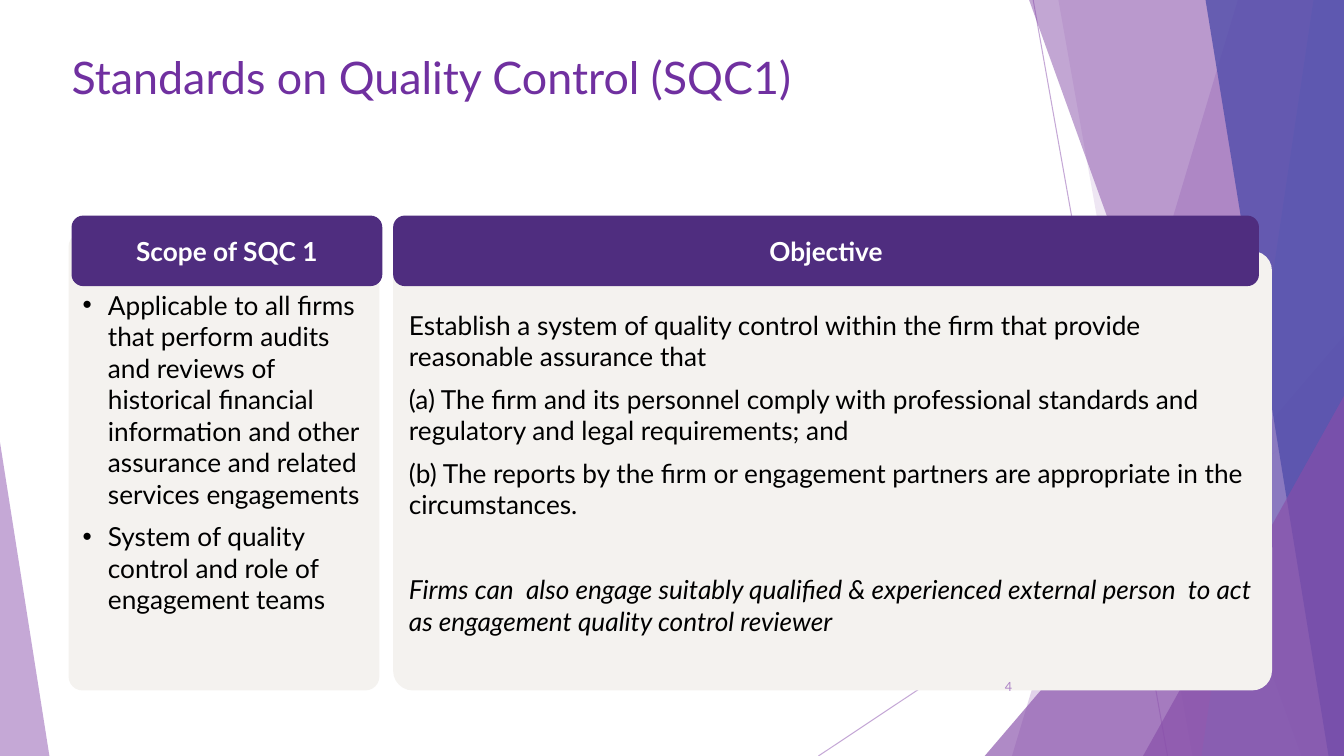
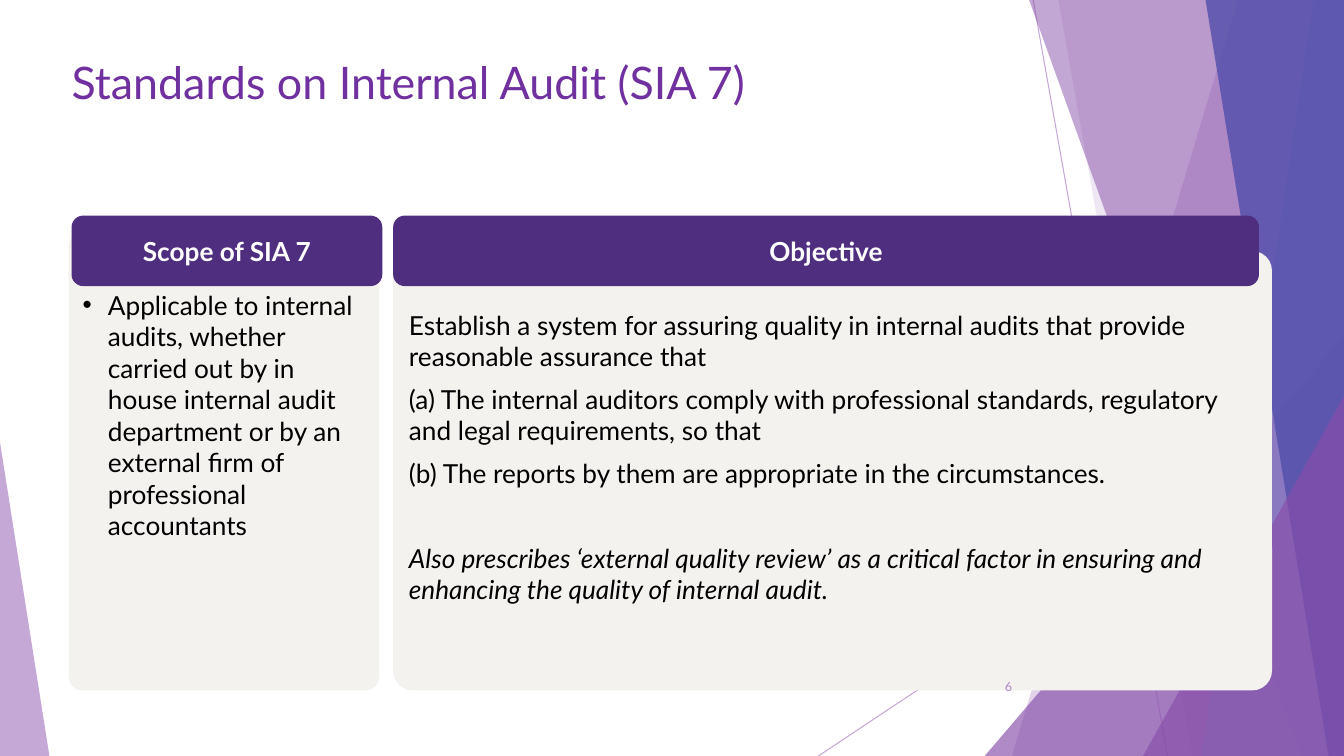
import pptx
import pptx.dml.color
import pptx.enum.shapes
import pptx.enum.text
import pptx.oxml.ns
import pptx.util
from lxml import etree

Pt = pptx.util.Pt
qn = pptx.oxml.ns.qn
SHAPE = pptx.enum.shapes.MSO_SHAPE
ALIGN = pptx.enum.text.PP_ALIGN
ANCHOR = pptx.enum.text.MSO_ANCHOR

WIDTH, HEIGHT = 960, 540
FONT = "Lato"
TITLE, HEADER, CARD = "7030A0", "4F2D7F", "F4F2EF"
LILAC, PURPLE, PERIWINKLE, INDIGO = "AD84C6", "874EA9", "8784C7", "524EAB"
BODY_SIZE = 18.7
CARD_BOTTOM, CARD_ROUNDING = 493.2, 0.045
HEADER_TOP, HEADER_HEIGHT = 154, 50.4

# Background lines: start x, start y, end x, end y
RAYS = [(738, 0, 834, HEIGHT), (WIDTH, 290.2, 584.6, HEIGHT)]
# Wedges: x at the top, x at the bottom. Triangles: left, top, width, apex.
FACETS = [
    ((884.2, 722.9), LILAC, 36),
    ((756, 851.8), LILAC, 20),
    ((703.4, 239.8, 256.6, 1), PURPLE, 66),
    ((735.1, 929.5), PURPLE, 50),
    ((938.2, 858.2), PERIWINKLE, 70),
    ((861.1, 949), INDIGO, 80),
    ((816.5, 283, 143.5, 1), PURPLE, 66),
    ((0, 316, 35.3, 0), LILAC, 70),
]
# Card left, top and width, then header left and width
COLUMNS = [(49, 166.3, 222, 51.1, 222), (280.8, 179.3, 627.8, 280.8, 618.5)]

STANDARDS = [
    {
        "title": "Standards on Quality Control (SQC1)",
        "title_top": 35.3,
        "number": "4",
        "headers": ["Scope of SQC 1", "Objective"],
        "scope": [
            "Applicable to all firms that perform audits and reviews of historical "
            "financial information and other assurance and related services engagements",
            "System of quality control and role of engagement teams",
        ],
        "objective": [
            "Establish a system of quality control within the firm that provide "
            "reasonable assurance that",
            "(a) The firm and its personnel comply with professional standards and "
            "regulatory and legal requirements; and",
            "(b) The reports by the firm or engagement partners are appropriate in "
            "the circumstances.",
        ],
        "remark": "Firms can  also engage suitably qualified & experienced external "
                  "person  to act as engagement quality control reviewer",
    },
    {
        "title": "Standards on Internal Audit (SIA 7)",
        "title_top": 38.9,
        "number": "6",
        "headers": ["Scope of SIA 7", "Objective"],
        "scope": [
            "Applicable to internal audits, whether carried out by in house internal "
            "audit department or by an external firm of professional accountants",
        ],
        "objective": [
            "Establish a system for assuring quality in internal audits that provide "
            "reasonable assurance that",
            "(a) The internal auditors comply with professional standards, regulatory "
            "and legal requirements, so that",
            "(b) The reports by them are appropriate in the circumstances.",
        ],
        "remark": "Also prescribes ‘external quality review’ as a critical factor in "
                  "ensuring and enhancing the quality of internal audit.",
    },
]


def paint(fill, colour):
    fill.solid()
    fill.fore_color.rgb = pptx.dml.color.RGBColor.from_string(colour)


def write(paragraph, text, size, colour, align=ALIGN.LEFT, bold=False, italic=False):
    paragraph.alignment = align
    run = paragraph.add_run()
    run.text = text
    run.font.name, run.font.size = FONT, Pt(size)
    run.font.bold, run.font.italic = bold, italic
    paint(run.font.fill, colour)


deck = pptx.Presentation()
deck.slide_width, deck.slide_height = Pt(WIDTH), Pt(HEIGHT)
layout = deck.slide_layouts.get_by_name("Two Content")
slides = [deck.slides.add_slide(layout) for _ in STANDARDS]

# The backdrop is drawn once and moved into the shared layout
canvas = slides[0].shapes
backdrop = []
for ray in RAYS:
    line = canvas.add_connector(
        pptx.enum.shapes.MSO_CONNECTOR.STRAIGHT, *map(Pt, ray))
    line.line.width = Pt(0.75)
    paint(line.line.fill, LILAC)
    etree.SubElement(line.element.spPr, qn("a:effectLst"))
    backdrop.append((line, 70))

for geometry, colour, opacity in FACETS:
    if len(geometry) == 2:
        top_x, bottom_x = geometry
        outline = canvas.build_freeform(Pt(top_x), 0)
        outline.add_line_segments([(Pt(WIDTH), 0), (Pt(WIDTH), Pt(HEIGHT)),
                                   (Pt(bottom_x), Pt(HEIGHT))])
        facet = outline.convert_to_shape()
    else:
        left, top, width, apex = geometry
        facet = canvas.add_shape(SHAPE.ISOSCELES_TRIANGLE, Pt(left), Pt(top),
                                 Pt(width), Pt(HEIGHT - top))
        facet.adjustments[0] = apex
    facet.shadow.inherit = False
    facet.line.fill.background()
    paint(facet.fill, colour)
    backdrop.append((facet, opacity))

for position, (piece, opacity) in enumerate(backdrop):
    shade = piece.element.spPr.find(".//" + qn("a:srgbClr"))
    etree.SubElement(shade, qn("a:alpha"), val=str(opacity * 1000))
    piece.element.xpath("./*/p:cNvPr")[0].set("id", str(100 + position))
    layout.shapes.element.insert(2 + position, piece.element)

for slide, standard in zip(slides, STANDARDS):
    title, scope, objective = slide.placeholders
    title.left, title.top = Pt(51.1), Pt(standard["title_top"])
    title.width, title.height = Pt(861), Pt(88.6)
    heading = title.text_frame
    heading.margin_left = heading.margin_right = 0
    heading.margin_top = heading.margin_bottom = 0
    heading.vertical_anchor = ANCHOR.TOP
    heading.auto_size = pptx.enum.text.MSO_AUTO_SIZE.NONE
    write(heading.paragraphs[0], standard["title"], 32, TITLE)

    scope_items = [(text, False) for text in standard["scope"]]
    objective_items = [(text, False) for text in standard["objective"]]
    objective_items.append((standard["remark"], True))

    for column, label, body, items in zip(
            COLUMNS, standard["headers"], (scope, objective),
            (scope_items, objective_items)):
        left, top, width, header_left, header_width = column
        height = CARD_BOTTOM - top
        card = slide.shapes.add_shape(SHAPE.ROUNDED_RECTANGLE, Pt(left), Pt(top),
                                      Pt(width), Pt(height))
        card.adjustments[0] = CARD_ROUNDING
        header = slide.shapes.add_shape(
            SHAPE.ROUNDED_RECTANGLE, Pt(header_left), Pt(HEADER_TOP),
            Pt(header_width), Pt(HEADER_HEIGHT))
        for panel, colour in ((card, CARD), (header, HEADER)):
            panel.shadow.inherit = False
            panel.line.fill.background()
            paint(panel.fill, colour)
        header.text_frame.vertical_anchor = ANCHOR.MIDDLE
        write(header.text_frame.paragraphs[0], label, BODY_SIZE, "FFFFFF",
              ALIGN.CENTER, bold=True)

        # The text keeps clear of the rounded corners of its card
        corner = 0.29 * CARD_ROUNDING * min(width, height)
        body.left, body.top = Pt(left + corner), Pt(top + corner)
        body.width, body.height = Pt(width - 2 * corner), Pt(height - 2 * corner)
        frame = body.text_frame
        frame.margin_left = frame.margin_right = frame.margin_bottom = Pt(7.2)
        frame.margin_top = Pt(37.4)
        frame.vertical_anchor = ANCHOR.TOP
        frame.auto_size = pptx.enum.text.MSO_AUTO_SIZE.NONE
        for index, (text, is_remark) in enumerate(items):
            paragraph = frame.add_paragraph() if index else frame.paragraphs[0]
            paragraph.space_before = Pt(30.4 if is_remark else 0)
            paragraph.space_after = Pt(8)
            indent = 18 if body is scope else 0
            properties = paragraph._p.get_or_add_pPr()
            properties.set("marL", str(Pt(indent)))
            properties.set("indent", str(Pt(-indent)))
            if body is scope:
                etree.SubElement(properties, qn("a:buChar"), char="•")
            else:
                etree.SubElement(properties, qn("a:buNone"))
            write(paragraph, text, BODY_SIZE, "000000", italic=is_remark)
        slide.shapes.element.append(body.element)

    page = slide.shapes.add_textbox(Pt(676), Pt(476), Pt(54), Pt(28.8)).text_frame
    page.word_wrap = True
    page.vertical_anchor = ANCHOR.MIDDLE
    write(page.paragraphs[0], standard["number"], 9, LILAC, ALIGN.RIGHT)

deck.save("out.pptx")
